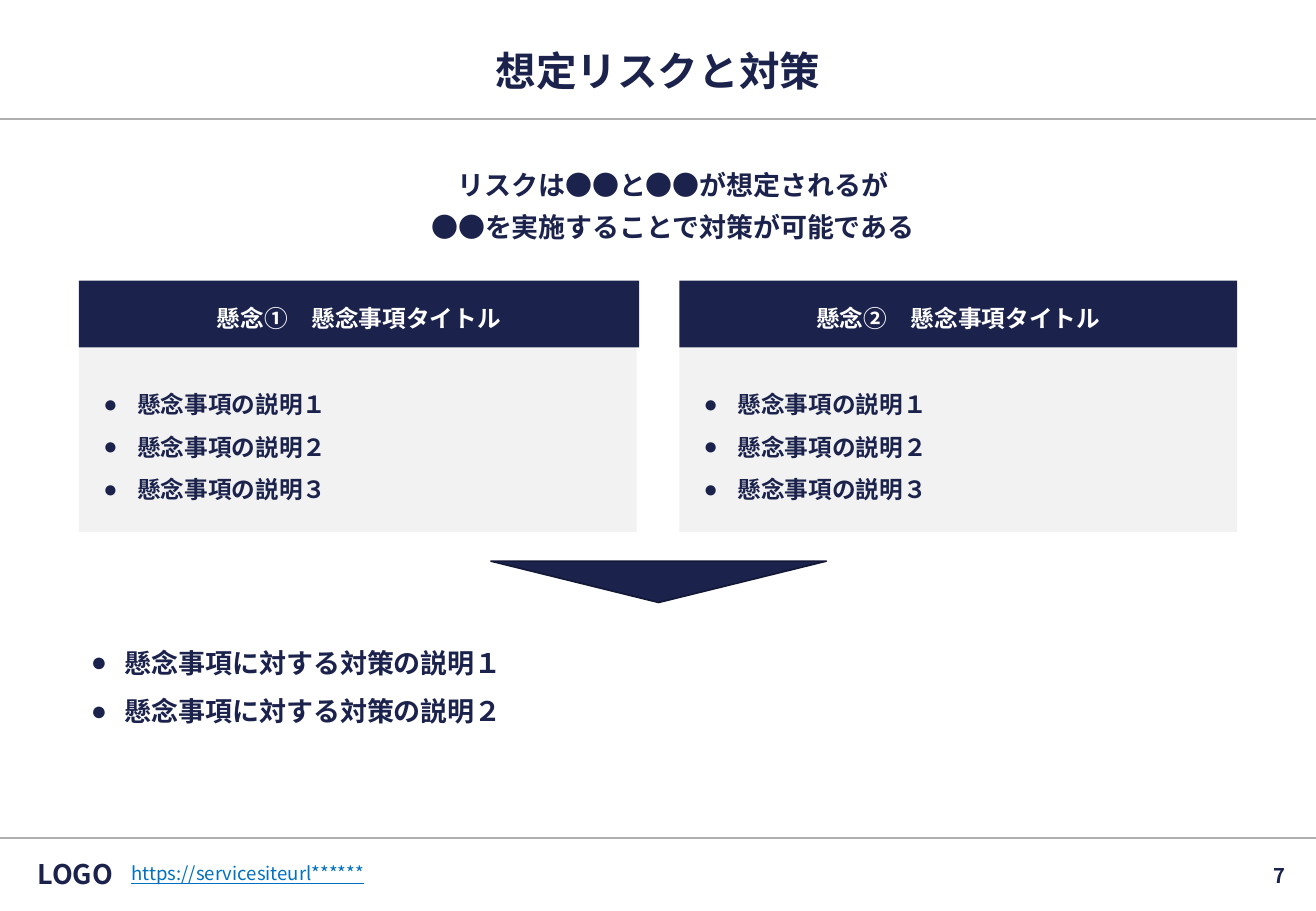
from lxml import etree
from pptx import Presentation
from pptx.dml.color import RGBColor
from pptx.enum import shapes, text
from pptx.oxml import ns
from pptx.util import Inches, Pt

NAVY = RGBColor(0x1B, 0x22, 0x4C)
DARK = RGBColor(0x13, 0x18, 0x37)
PALE = RGBColor(0xF2, 0xF2, 0xF2)
GRAY = RGBColor(0xAF, 0xAF, 0xAF)
BLUE = RGBColor(0x00, 0x70, 0xC0)
WHITE = RGBColor(0xFF, 0xFF, 0xFF)
FONT = "Noto Sans CJK JP"
LEFT, CENTER, RIGHT = text.PP_ALIGN.LEFT, text.PP_ALIGN.CENTER, text.PP_ALIGN.RIGHT
TOP, MIDDLE = text.MSO_ANCHOR.TOP, text.MSO_ANCHOR.MIDDLE
SMALL = (0.04, 0.04, 0.04, 0.04)


def write(sp, lines, size, color=NAVY, bold=True, underline=None, align=LEFT, anchor=TOP,
          spacing=1.0, insets=(0.1, 0.05, 0.1, 0.05), indent=None, bullet=False):
    tf = sp.text_frame
    tf.word_wrap = True
    tf.auto_size = text.MSO_AUTO_SIZE.NONE
    tf.vertical_anchor = anchor
    tf.margin_left, tf.margin_top, tf.margin_right, tf.margin_bottom = map(Inches, insets)
    for i, line in enumerate(lines):
        p = tf.add_paragraph() if i else tf.paragraphs[0]
        p.alignment = align
        p.line_spacing = spacing
        pPr = p._p.get_or_add_pPr()
        if indent:
            pPr.set("marL", str(Inches(indent[0])))
            pPr.set("indent", str(Inches(indent[1])))
        if bullet:
            clr = etree.SubElement(pPr, ns.qn("a:buClr"))
            etree.SubElement(clr, ns.qn("a:srgbClr"), val=str(color))
            etree.SubElement(pPr, ns.qn("a:buFont"), typeface="Arial")
            etree.SubElement(pPr, ns.qn("a:buChar"), char="●")
        r = p.add_run()
        r.text = line
        r.font.name = FONT
        r.font.size = Pt(size)
        r.font.bold = bold
        r.font.underline = underline
        r.font.color.rgb = color
        etree.SubElement(r._r.get_or_add_rPr(), ns.qn("a:ea"), typeface=FONT)


def add_block(kind, box, fill):
    sp = s.shapes.add_shape(kind, *map(Inches, box))
    sp.shadow.inherit = False
    sp.fill.solid()
    sp.fill.fore_color.rgb = fill
    sp.line.fill.background()
    return sp


prs = Presentation()
prs.slide_width, prs.slide_height = Inches(10.83), Inches(7.5)
s = prs.slides.add_slide(prs.slide_layouts[5])

for y in (0.98, 6.9):
    rule = s.shapes.add_connector(shapes.MSO_CONNECTOR.STRAIGHT, 0, Inches(y), prs.slide_width, Inches(y))
    rule.line.color.rgb = GRAY
    rule.line.width = Pt(0.75)
    etree.SubElement(rule._element.spPr, ns.qn("a:effectLst"))

title = s.shapes.title
title.left, title.top, title.width, title.height = map(Inches, (0.65, 0.39, 9.53, 0.39))
write(title, ["想定リスクと対策"], 24, align=CENTER, anchor=MIDDLE, spacing=0.9,
      insets=(0.04, 0.08, 0.04, 0.04))

hanging = (0.28, -0.28)
concerns = [f"懸念事項の説明{n}" for n in "１２３"]
for x, number, head_width in ((0.65, "①", 4.61), (5.59, "②", 4.59)):
    body = add_block(shapes.MSO_SHAPE.RECTANGLE, (x, 2.86, 4.59, 1.52), PALE)
    write(body, concerns, 14, anchor=MIDDLE, spacing=1.5, insets=(0.2, 0.04, 0.04, 0.04),
          indent=hanging, bullet=True)
    head = add_block(shapes.MSO_SHAPE.RECTANGLE, (x, 2.31, head_width, 0.55), NAVY)
    write(head, [f"懸念{number}　懸念事項タイトル"], 14, color=WHITE, align=CENTER,
          anchor=MIDDLE, spacing=1.3)

arrow = add_block(shapes.MSO_SHAPE.ISOSCELES_TRIANGLE, (4.04, 4.62, 2.76, 0.34), NAVY)
arrow.rotation = 180
arrow.line.color.rgb = DARK
arrow.line.width = Pt(1)

measures = [f"懸念事項に対する対策の説明{n}" for n in "１２"]
summary = ["リスクは●●と●●が想定されるが", "●●を実施することで対策が可能である"]
for box, lines, style in (
    ((0.65, 1.27, 9.53, 0.78), summary,
     dict(size=16, align=CENTER, spacing=1.3, insets=SMALL, indent=(0.5, -0.25))),
    ((0.65, 5.14, 9.53, 0.87), measures,
     dict(size=16, spacing=1.5, indent=hanging, bullet=True)),
    ((0.21, 7, 0.82, 0.39), ["LOGO"],
     dict(size=16, align=CENTER, anchor=MIDDLE, insets=SMALL)),
    ((1.04, 7.06, 5.75, 0.26), ["https://servicesiteurl******"],
     dict(size=11, color=BLUE, bold=False, underline=True, insets=SMALL)),
    ((8.24, 7.01, 2.44, 0.39), ["7"],
     dict(size=12, align=RIGHT, anchor=MIDDLE)),
):
    write(s.shapes.add_textbox(*map(Inches, box)), lines, **style)

prs.save("out.pptx")
